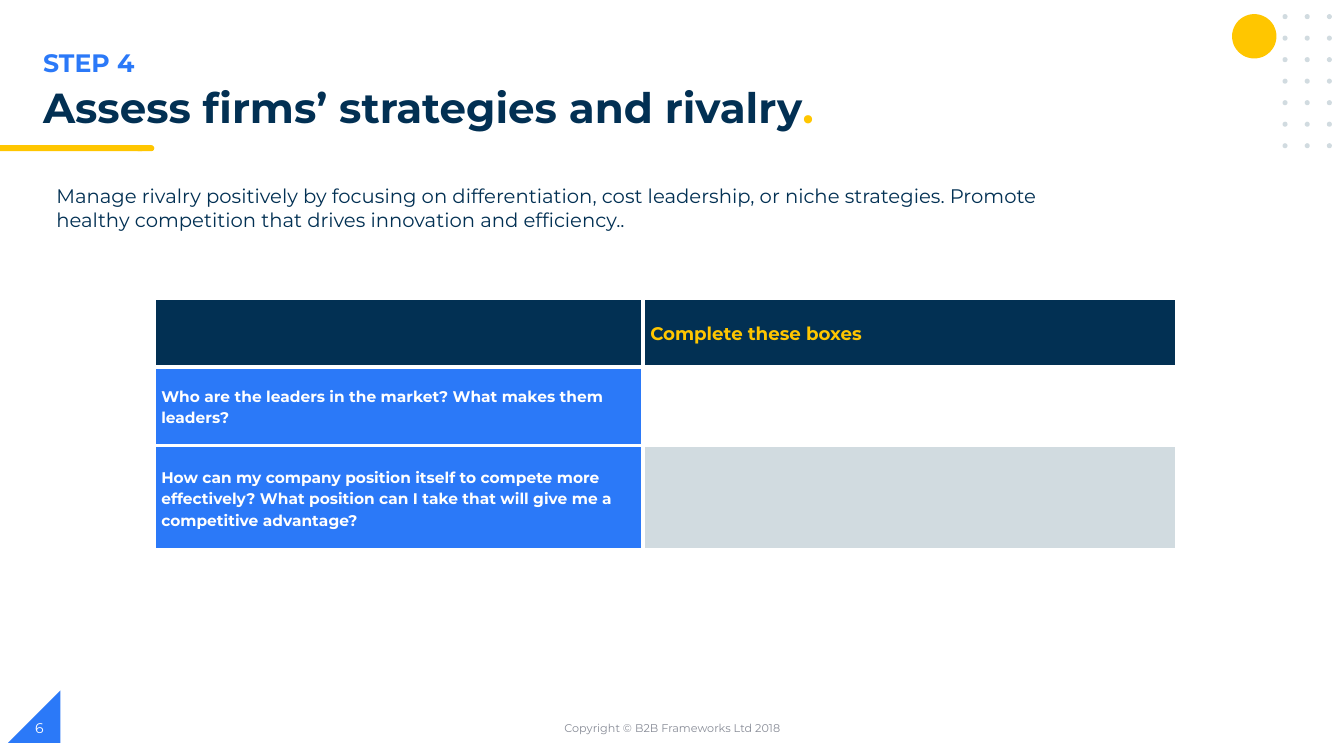
import pptx
import pptx.util
import pptx.dml.color
import pptx.enum.shapes
import pptx.enum.text
import pptx.oxml.ns
from lxml import etree

Inches = pptx.util.Inches
Pt = pptx.util.Pt
SHAPES = pptx.enum.shapes.MSO_SHAPE
MIDDLE = pptx.enum.text.MSO_ANCHOR.MIDDLE
CENTER = pptx.enum.text.PP_ALIGN.CENTER

FONT = "Montserrat"
NAVY, BLUE, YELLOW = "023053", "2B79F8", "FFC600"
PALE, GREY, WHITE = "D1DBE0", "888C97", "FFFFFF"


def color(value):
    return pptx.dml.color.RGBColor.from_string(value)


def set_font(paragraph, size, value, bold=False):
    paragraph.font.name = FONT
    paragraph.font.size = Pt(size)
    paragraph.font.bold = bold
    paragraph.font.color.rgb = color(value)


def add_decoration(slide, kind, left, top, width, height, value):
    decoration = slide.shapes.add_shape(
        kind, Inches(left), Inches(top), Inches(width), Inches(height))
    decoration.shadow.inherit = False
    decoration.fill.solid()
    decoration.fill.fore_color.rgb = color(value)
    decoration.line.fill.background()
    return decoration


def add_text(slide, left, top, width, height, text, size, value,
             bold=False, anchor=None, align=None):
    box = slide.shapes.add_textbox(
        Inches(left), Inches(top), Inches(width), Inches(height))
    frame = box.text_frame
    frame.word_wrap = True
    frame.vertical_anchor = anchor
    paragraph = frame.paragraphs[0]
    paragraph.text = text
    paragraph.alignment = align
    set_font(paragraph, size, value, bold)
    return paragraph


def add_borders(cell):
    properties = cell._tc.get_or_add_tcPr()
    for side in ("lnL", "lnR", "lnT", "lnB"):
        line = etree.SubElement(
            properties, pptx.oxml.ns.qn(f"a:{side}"), w=str(Pt(3)))
        fill = etree.SubElement(line, pptx.oxml.ns.qn("a:solidFill"))
        etree.SubElement(fill, pptx.oxml.ns.qn("a:srgbClr"), val=WHITE)


def fill_cell(cell, text, size, text_color, fill_color):
    add_borders(cell)
    cell.fill.solid()
    cell.fill.fore_color.rgb = color(fill_color)
    cell.vertical_anchor = MIDDLE
    cell.margin_left = cell.margin_right = Inches(0.07)
    cell.margin_top = cell.margin_bottom = 0
    paragraph = cell.text_frame.paragraphs[0]
    paragraph.text = text
    paragraph.line_spacing = 1.15
    set_font(paragraph, size, text_color, True)


def add_question_table(slide):
    widths = [4.85, 5.29]
    heights = [0.68, 0.78, 1.04]
    rows = [
        [("", 13, YELLOW, NAVY),
         ("Complete these boxes", 13, YELLOW, NAVY)],
        [("Who are the leaders in the market? What makes them leaders?",
          11, WHITE, BLUE),
         ("", 11, NAVY, WHITE)],
        [("How can my company position itself to compete more effectively? "
          "What position can I take that will give me a competitive advantage?",
          11, WHITE, BLUE),
         ("", 11, NAVY, PALE)],
    ]
    questions = slide.shapes.add_table(
        len(rows), len(widths), Inches(1.53), Inches(2.96),
        Inches(sum(widths)), Inches(sum(heights))).table
    questions.horz_banding = False
    for column, width in zip(questions.columns, widths):
        column.width = Inches(width)
    for row, height, contents in zip(questions.rows, heights, rows):
        row.height = Inches(height)
        for cell, content in zip(row.cells, contents):
            fill_cell(cell, *content)


def add_dot_grid(slide):
    for row in range(7):
        for column in range(3):
            add_decoration(slide, SHAPES.OVAL, 12.72 + column * 0.22,
                           0.14 + row * 0.2135, 0.05, 0.05, PALE)


def main():
    deck = pptx.Presentation()
    deck.slide_width = Inches(13.33)
    deck.slide_height = Inches(7.5)
    slide = deck.slides.add_slide(deck.slide_layouts[6])

    corner = add_decoration(
        slide, SHAPES.RIGHT_TRIANGLE, 0.08, 6.85, 0.52, 0.52, BLUE)
    corner._element.spPr.xfrm.set("flipH", "1")
    add_decoration(slide, SHAPES.FLOWCHART_TERMINATOR,
                   1.34, 1.44, 0.19, 0.06, YELLOW)
    add_decoration(slide, SHAPES.RECTANGLE, 0, 1.44, 1.41, 0.06, YELLOW)
    add_decoration(slide, SHAPES.OVAL, 12.22, 0.14, 0.44, 0.44, YELLOW)
    add_dot_grid(slide)

    add_text(slide, 0.33, 0.42, 6.69, 0.4, "STEP 4", 18, BLUE, bold=True)
    title = add_text(slide, 0.33, 0.82, 12.08, 0.56,
                     "Assess firms’ strategies and rivalry", 30, NAVY, bold=True)
    title.line_spacing = 0.9
    full_stop = title.add_run()
    full_stop.text = "."
    full_stop.font.color.rgb = color(YELLOW)

    add_text(slide, 0.46, 1.78, 10.62, 0.57,
             "Manage rivalry positively by focusing on differentiation, cost "
             "leadership, or niche strategies. Promote healthy competition that "
             "drives innovation and efficiency..", 14, NAVY)
    add_question_table(slide)
    add_text(slide, 4.42, 7.02, 4.5, 0.4, "Copyright © B2B Frameworks Ltd 2018",
             8, GREY, anchor=MIDDLE, align=CENTER)
    add_text(slide, 0.25, 7.02, 3, 0.4, "6", 10, WHITE, anchor=MIDDLE)

    deck.save("out.pptx")


if __name__ == "__main__":
    main()
